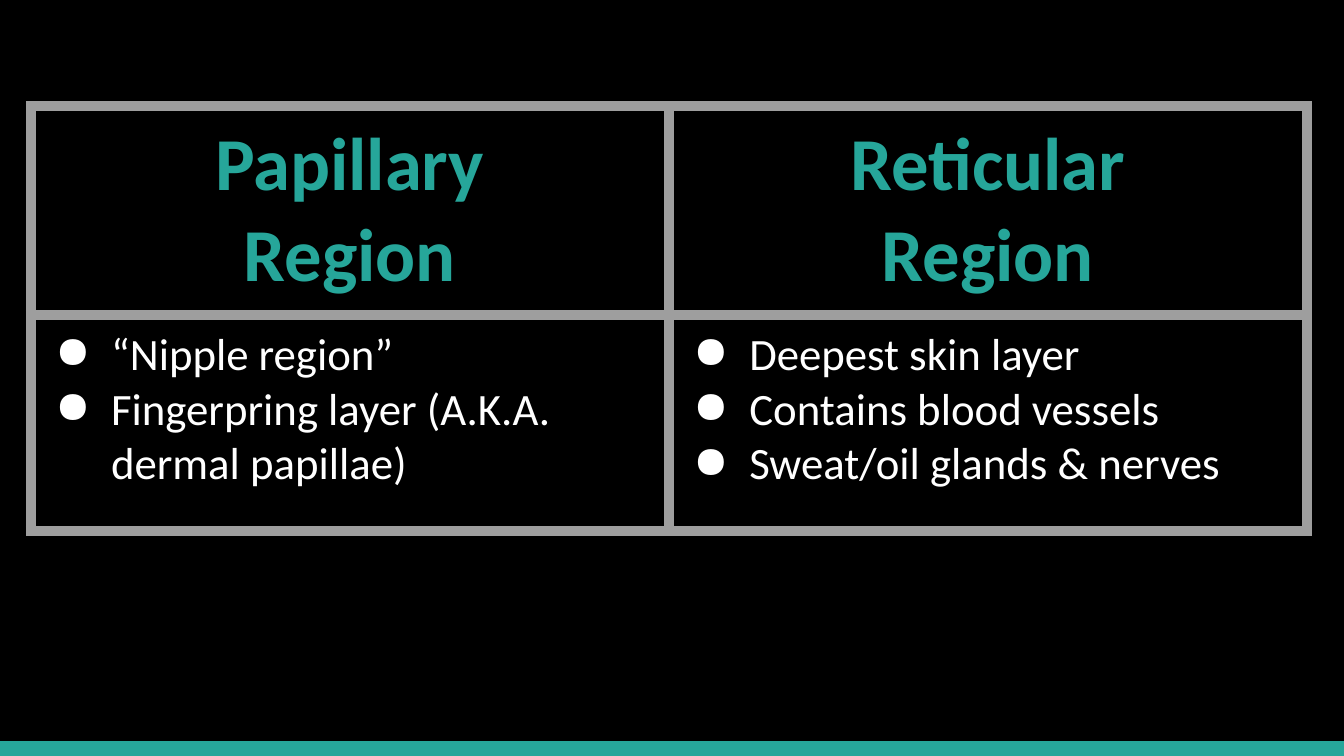
"""Build a slide comparing the two regions of the dermis."""
from lxml.etree import SubElement, Element
from pptx import Presentation
from pptx.dml.color import RGBColor
from pptx.enum.shapes import MSO_SHAPE
from pptx.enum.text import PP_ALIGN
from pptx.oxml.ns import qn
from pptx.util import Cm, Pt

BLACK = RGBColor(0x00, 0x00, 0x00)
WHITE = RGBColor(0xFF, 0xFF, 0xFF)
TEAL = RGBColor(0x26, 0xA6, 0x9A)
GREY = RGBColor(0x9E, 0x9E, 0x9E)

REGIONS = [
    (["Papillary", "Region"],
     ["“Nipple region”", "Fingerpring layer (A.K.A. dermal papillae)"]),
    (["Reticular", "Region"],
     ["Deepest skin layer", "Contains blood vessels",
      "Sweat/oil glands & nerves"]),
]
HEAD = {"name": "Calibri", "size": Pt(40), "bold": True}
BODY = {"name": "Calibri", "size": Pt(24), "bold": False}
INSETS = {"margin_left": Cm(0.25), "margin_right": Cm(0.25),
          "margin_top": Cm(0.25), "margin_bottom": Cm(0.25)}
PLAIN = {"first_row": False, "horz_banding": False}
WIDE, HIGH, BAR = Cm(25.4), Cm(14.29), Cm(0.28)
LEFT, TOP, COL = Cm(0.58), Cm(2.01), Cm(12.06)
ROWS = [Cm(3.56), Cm(4.09)]
EDGE = Pt(6)


def style(item, form):
    for name, value in form.items():
        setattr(item, name, value)


def add_edges(cell):
    props = cell._tc.get_or_add_tcPr()
    for spot, side in enumerate(("lnL", "lnR", "lnT", "lnB")):
        line = Element(qn(f"a:{side}"), w=str(EDGE))
        fill = SubElement(line, qn("a:solidFill"))
        SubElement(fill, qn("a:srgbClr"), val=str(GREY))
        props.insert(spot, line)


def add_bullet(para):
    props = para._p.get_or_add_pPr()
    props.set("marL", str(Cm(1.27)))
    props.set("indent", str(-Cm(1.06)))
    tint = SubElement(props, qn("a:buClr"))
    SubElement(tint, qn("a:srgbClr"), val=str(WHITE))
    SubElement(props, qn("a:buChar"), char="●")


def fill_cell(cell, lines, form, color, head):
    style(cell, INSETS)
    cell.fill.background()
    add_edges(cell)
    frame = cell.text_frame
    for num, line in enumerate(lines):
        para = frame.add_paragraph() if num else frame.paragraphs[0]
        run = para.add_run()
        run.text = line
        style(run.font, form)
        run.font.color.rgb = color
        if head:
            para.alignment = PP_ALIGN.CENTER
        else:
            add_bullet(para)


def main():
    deck = Presentation()
    style(deck, {"slide_width": WIDE, "slide_height": HIGH})
    slide = deck.slides.add_slide(deck.slide_layouts[6])
    back = slide.background.fill
    back.solid()
    back.fore_color.rgb = BLACK

    bar = slide.shapes.add_shape(MSO_SHAPE.RECTANGLE, 0, HIGH - BAR, WIDE, BAR)
    bar.shadow.inherit = False
    bar.fill.solid()
    bar.fill.fore_color.rgb = TEAL
    bar.line.fill.background()

    count = len(REGIONS)
    table = slide.shapes.add_table(
        len(ROWS), count, LEFT, TOP, COL * count, sum(ROWS)).table
    style(table, PLAIN)
    for row, high in zip(table.rows, ROWS):
        row.height = high
    for num, (title, facts) in enumerate(REGIONS):
        table.columns[num].width = COL
        fill_cell(table.cell(0, num), title, HEAD, TEAL, True)
        fill_cell(table.cell(1, num), facts, BODY, WHITE, False)
    deck.save("out.pptx")


if __name__ == "__main__":
    main()
